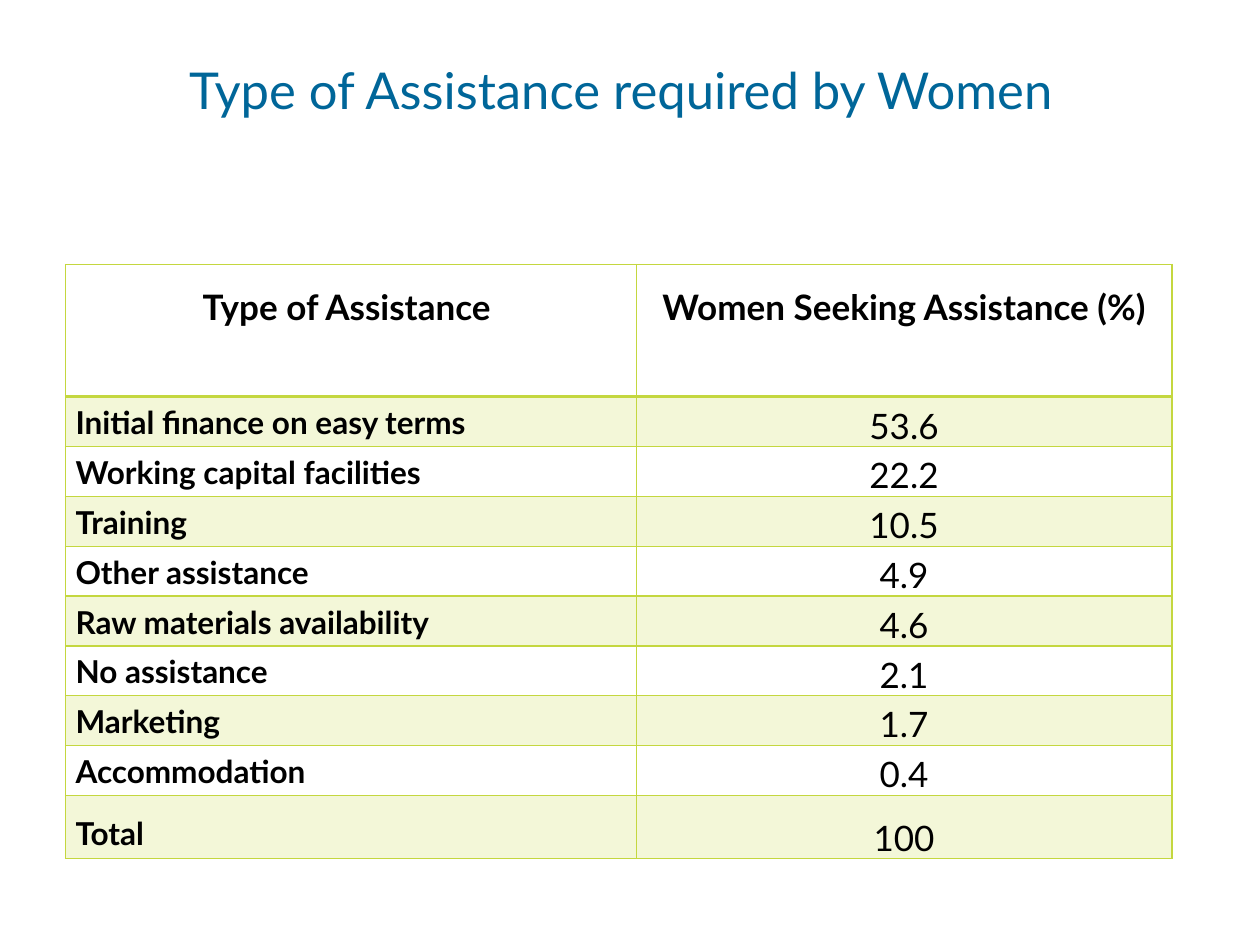
from lxml.etree import SubElement
from pptx import Presentation
from pptx.dml.color import RGBColor
from pptx.enum.text import MSO_ANCHOR, PP_ALIGN
from pptx.oxml import parse_xml
from pptx.oxml.ns import nsdecls, qn
from pptx.util import Inches, Pt

COLORS = {"title": "006699", "text": "000000", "lime": "C4D73F"}
FONT = "Lato"
ROWS = [
    ("Type of Assistance ", "Women Seeking Assistance (%)"),
    ("Initial finance on easy terms", "53.6"),
    ("Working capital facilities", "22.2"),
    ("Training", "10.5"),
    ("Other assistance", "4.9"),
    ("Raw materials availability", "4.6"),
    ("No assistance", "2.1"),
    ("Marketing", "1.7"),
    ("Accommodation", "0.4"),
    ("Total", "100"),
]
HEADER, TOTAL = 0, len(ROWS) - 1
COLUMN_WIDTHS = (4.53, 4.25)
ROW_HEIGHTS = [1.05] + [0.39] * (len(ROWS) - 2) + [0.5]


def style_paragraph(paragraph, size, color, bold, align):
    paragraph.alignment = align
    font = paragraph.font
    font.name, font.size, font.bold = FONT, Pt(size), bold
    font.color.rgb = RGBColor.from_string(COLORS[color])


def set_borders(cell, widths):
    """Draw left, right, top and bottom lines of the given point widths."""
    for position, (side, width) in enumerate(zip("LRTB", widths)):
        line = parse_xml(
            f'<a:ln{side} {nsdecls("a")} w="{Pt(width)}"><a:solidFill>'
            f'<a:srgbClr val="{COLORS["lime"]}"/></a:solidFill></a:ln{side}>'
        )
        cell._tc.get_or_add_tcPr().insert(position, line)


prs = Presentation()
prs.slide_width, prs.slide_height = Inches(10), Inches(7.5)
slide = prs.slides.add_slide(prs.slide_layouts[5])

title = slide.shapes.title
title.left, title.top = Inches(0.52), Inches(0.42)
title.width, title.height = Inches(8.82), Inches(0.59)
title.text_frame.text = "Type of Assistance required by Women"
title.text_frame.vertical_anchor = MSO_ANCHOR.TOP
style_paragraph(title.text_frame.paragraphs[0], 29, "title", False, PP_ALIGN.CENTER)

assistance = slide.shapes.add_table(
    len(ROWS), len(COLUMN_WIDTHS), Inches(0.52), Inches(2.1),
    Inches(sum(COLUMN_WIDTHS)), Inches(sum(ROW_HEIGHTS)),
).table
assistance.first_row = assistance.horz_banding = False
for column, width in zip(assistance.columns, COLUMN_WIDTHS):
    column.width = Inches(width)

for row, (texts, height) in enumerate(zip(ROWS, ROW_HEIGHTS)):
    assistance.rows[row].height = Inches(height)
    for col, text in enumerate(texts):
        cell = assistance.cell(row, col)
        cell.text = text
        cell.margin_left = cell.margin_right = Inches(0.08)
        cell.margin_top = Inches(0 if row in (HEADER, TOTAL) else 0.01)
        cell.margin_bottom = 0

        is_label = col == 0 and row != HEADER
        paragraph = cell.text_frame.paragraphs[0]
        paragraph.line_spacing = 1.5 if row in (HEADER, TOTAL) else 1.15
        style_paragraph(
            paragraph, 18 if is_label else 20, "text", is_label or row == HEADER,
            PP_ALIGN.LEFT if is_label else PP_ALIGN.CENTER,
        )

        if row % 2:
            cell.fill.solid()
            cell.fill.fore_color.rgb = RGBColor.from_string(COLORS["lime"])
            tint = cell._tc.tcPr.find(".//" + qn("a:srgbClr"))
            SubElement(tint, qn("a:alpha"), val="20000")
        else:
            cell.fill.background()
        set_borders(cell, (1, 1, 2 if row == HEADER + 1 else 1, 2 if row == HEADER else 1))

prs.save("out.pptx")
